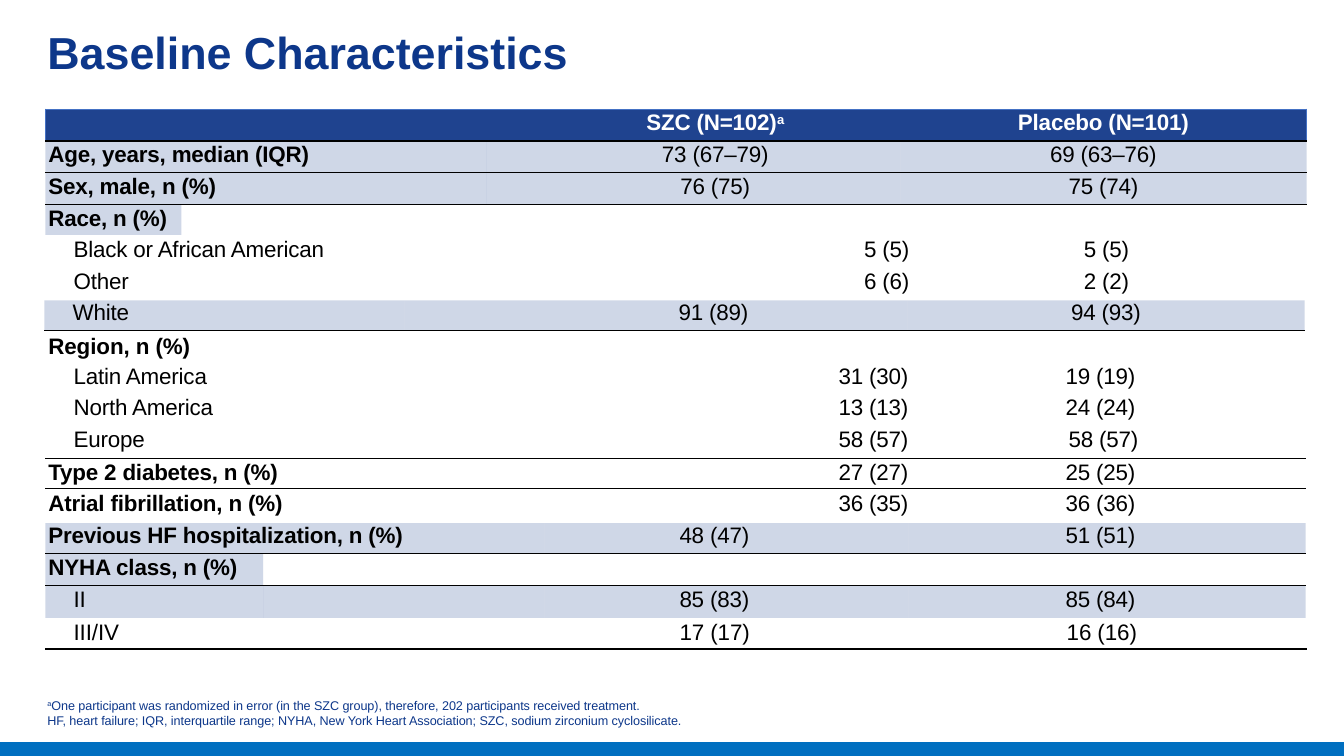
from dataclasses import dataclass, field

from lxml import etree
from pptx import Presentation
from pptx import util as u
from pptx.dml import color
from pptx.enum import shapes, text
from pptx.oxml import ns

NAVY, TITLE_BLUE, BAR_BLUE, EDGE_BLUE = "1F438F", "0D378A", "006FC0", "4471C4"
BLACK, WHITE = "000000", "FFFFFF"
LEFT, CENTER, RIGHT = text.PP_ALIGN.LEFT, text.PP_ALIGN.CENTER, text.PP_ALIGN.RIGHT
NO_GRID_STYLE = "{2D5ABB26-0587-4C30-8999-92F81FD0307C}"
RULE = (BLACK, 1)
TOP, BOTTOM, BOTH = {"T": RULE}, {"B": RULE}, {"T": RULE, "B": RULE}
HEADER_EDGES = {side: (EDGE_BLUE, 0.5) for side in "LRT"} | BOTTOM
LABEL_SPAN, VALUE_SPAN = (0, 1), (1, 3)


@dataclass
class Column:
    width: float
    indent: float = 0
    align: text.PP_ALIGN = LEFT


@dataclass
class Row:
    height: float
    spacing: float | None
    texts: tuple[str, ...]
    bold: bool = True
    indent: float = 0.03
    inset: float = 0
    shaded: int = 0
    borders: dict = field(default_factory=dict)
    span: tuple[int, int] | None = None
    last_shift: float = 0
    header: bool = False


@dataclass
class Block:
    left: float
    top: float
    columns: list[Column]
    rows: list[Row]


@dataclass
class Label:
    left: float
    top: float
    width: float
    height: float
    lines: tuple[str, ...]
    size: float = 16
    hue: str = BLACK
    bold: bool = False
    indent: float = 0.01


BLOCKS = [
    Block(0.45, 1.08,
          [Column(1.35), Column(3.03), Column(4.1, 0.43, CENTER), Column(4.03, 0, CENTER)],
          [Row(0.32, 18.8, ("", "", "SZC (N=102)^a^", "Placebo (N=101)"),
               borders=HEADER_EDGES, header=True),
           Row(0.31, 18.9, ("Age, years, median (IQR)", "", "73 (67–79)", "69 (63–76)"),
               shaded=4, borders=BOTH, span=LABEL_SPAN),
           Row(0.32, 18.9, ("Sex, male, n (%)", "", "76 (75)", "75 (74)"),
               shaded=4, borders=BOTH, span=LABEL_SPAN),
           Row(0.3, 18.9, ("Race, n (%)", "", "", ""), shaded=1, borders=TOP, span=VALUE_SPAN)]),
    Block(0.7, 2.36,
          [Column(4.37), Column(3.95, 0, RIGHT), Column(2.18, 0, RIGHT)],
          [Row(0.28, 17.6, ("Black or African American", "5 (5)", "5 (5)"), False),
           Row(0.28, 18.4, ("Other", "6 (6)", "2 (2)"), False, inset=0.02)]),
    Block(0.44, 2.98,
          [Column(3.57), Column(4.99, 2.72), Column(3.94, 0, CENTER)],
          [Row(0.3, 17.9, ("White", "91 (89)", "94 (93)"), False, 0.28,
               shaded=3, borders=BOTTOM)]),
    Block(0.45, 3.62,
          [Column(4.35), Column(4.21, 0, RIGHT), Column(3.94, 1.56)],
          [Row(0.28, 17.6, ("Latin America", "31 (30)", "19 (19)"), False, 0.28),
           Row(0.32, None, ("North America", "13 (13)", "24 (24)"), False, 0.28, 0.02),
           Row(0.33, None, ("Europe", "58 (57)", "58 (57)"), False, 0.28, 0.02,
               borders=BOTTOM, last_shift=0.03),
           Row(0.3, 18.9, ("Type 2 diabetes, n (%)", "27 (27)", "25 (25)"), borders=BOTH),
           Row(0.28, 18.4, ("Atrial fibrillation, n (%)", "36 (35)", "36 (36)"),
               inset=0.02, borders=TOP)]),
    Block(0.45, 5.19,
          [Column(2.16), Column(2.79), Column(3.61, 1.34), Column(3.94, 1.56)],
          [Row(0.3, 17.9, ("Previous HF hospitalization, n (%)", "", "48 (47)", "51 (51)"),
               shaded=4, borders=BOTTOM, span=LABEL_SPAN),
           Row(0.32, 18.9, ("NYHA class, n (%)", "", "", ""),
               shaded=1, borders=BOTH, span=VALUE_SPAN),
           Row(0.32, 18.7, ("II", "", "85 (83)", "85 (84)"), False, 0.28,
               shaded=4, borders=TOP)]),
]

LABELS = [
    Label(0.46, 0.23, 5.4, 0.56, ("Baseline Characteristics",), 32, TITLE_BLUE, True),
    Label(0.43, 6.9, 6.7, 0.33, (
        "^a^One participant was randomized in error (in the SZC group), "
        "therefore, 202 participants received treatment.",
        "HF, heart failure; IQR, interquartile range; NYHA, New York Heart Association; "
        "SZC, sodium zirconium cyclosilicate."), 9, TITLE_BLUE, indent=0.04),
    Label(0.47, 3.27, 1.5, 0.29, ("Region, n (%)",), bold=True),
    Label(0.72, 6.11, 0.6, 0.29, ("III/IV",)),
    Label(6.73, 6.11, 0.8, 0.29, ("17 (17)",)),
    Label(10.57, 6.11, 0.8, 0.29, ("16 (16)",)),
]


def rgb(value: str) -> color.RGBColor:
    return color.RGBColor.from_string(value)


def set_all(target, values: dict) -> None:
    for name, value in values.items():
        setattr(target, name, value)


def margins(left: float, top: float) -> dict:
    return {"margin_left": u.Inches(left), "margin_top": u.Inches(top),
            "margin_right": 0, "margin_bottom": 0}


def write(paragraph, content: str, size: float, bold: bool, hue: str, tracking: int = -10) -> None:
    for index, part in enumerate(content.split("^")):
        if part:
            run = paragraph.add_run()
            run.text = part
            set_all(run.font, {"name": "Arial", "size": u.Pt(size), "bold": bold})
            run.font.color.rgb = rgb(hue)
            properties = run._r.get_or_add_rPr()
            properties.set("spc", str(tracking))
            if index % 2:
                properties.set("baseline", "28000")


def add_border(cell, side: str, hue: str, width: float) -> None:
    line = etree.SubElement(cell._tc.get_or_add_tcPr(), ns.qn(f"a:ln{side}"), w=str(u.Pt(width)))
    solid = etree.SubElement(line, ns.qn("a:solidFill"))
    etree.SubElement(solid, ns.qn("a:srgbClr"), val=hue)


def paint_cell(cell, row: Row, index: int, last: int) -> None:
    for side in "LRTB":
        at_edge = {"L": index == 0, "R": index == last}.get(side, True)
        if side in row.borders and at_edge:
            add_border(cell, side, *row.borders[side])
    if not row.header and index >= row.shaded:
        cell.fill.background()
        return
    cell.fill.solid()
    cell.fill.fore_color.rgb = rgb(NAVY)
    if not row.header:
        tint = cell._tc.tcPr.find(f"{ns.qn('a:solidFill')}/{ns.qn('a:srgbClr')}")
        etree.SubElement(tint, ns.qn("a:alpha"), val="21000")


def fill_cell(cell, row: Row, column: Column, index: int, last: int) -> None:
    indent = row.indent if index == 0 else column.indent
    if index == last:
        indent += row.last_shift
    set_all(cell, margins(indent, row.inset))
    paint_cell(cell, row, index, last)
    paragraph = cell.text_frame.paragraphs[0]
    if row.texts[index]:
        paragraph.alignment = column.align
        if row.spacing:
            paragraph.line_spacing = u.Pt(row.spacing)
        bold = row.header or (row.bold and index == 0)
        write(paragraph, row.texts[index], 16, bold, WHITE if row.header else BLACK)
    else:
        etree.SubElement(paragraph._p, ns.qn("a:endParaRPr"), sz="1000")


def add_block(slide, block: Block) -> None:
    width = sum(column.width for column in block.columns)
    height = sum(row.height for row in block.rows)
    frame = slide.shapes.add_table(len(block.rows), len(block.columns), u.Inches(block.left),
                                   u.Inches(block.top), u.Inches(width), u.Inches(height))
    table = frame.table
    set_all(table, {"first_row": False, "horz_banding": False})
    table._tbl.tblPr.find(ns.qn("a:tableStyleId")).text = NO_GRID_STYLE
    for index, column in enumerate(block.columns):
        table.columns[index].width = u.Inches(column.width)
    for number, row in enumerate(block.rows):
        table.rows[number].height = u.Inches(row.height)
        for index, column in enumerate(block.columns):
            fill_cell(table.cell(number, index), row, column, index, len(block.columns) - 1)
        if row.span:
            first, final = row.span
            table.cell(number, first).merge(table.cell(number, final))


def add_label(slide, label: Label) -> None:
    shape = slide.shapes.add_textbox(*map(u.Inches, (label.left, label.top,
                                                     label.width, label.height)))
    frame = shape.text_frame
    set_all(frame, margins(label.indent, 0.02) | {"word_wrap": True})
    for index, line in enumerate(label.lines):
        paragraph = frame.add_paragraph() if index else frame.paragraphs[0]
        write(paragraph, line, label.size, label.bold, label.hue, 0 if label.size > 16 else -6)


def add_bar_and_rule(slide) -> None:
    bar = slide.shapes.add_shape(shapes.MSO_SHAPE.RECTANGLE, 0, u.Inches(7.37),
                                 u.Inches(13.33), u.Inches(0.13))
    bar.shadow.inherit = False
    bar.fill.solid()
    bar.fill.fore_color.rgb = bar.line.color.rgb = rgb(BAR_BLUE)
    bar.line.width = u.Pt(1)
    rule = slide.shapes.add_connector(shapes.MSO_CONNECTOR.STRAIGHT, u.Inches(0.45),
                                      u.Inches(6.44), u.Inches(12.96), u.Inches(6.44))
    rule.line.color.rgb = rgb(BLACK)
    rule.line.width = u.Pt(1)
    etree.SubElement(rule._element.spPr, ns.qn("a:effectLst"))


def main() -> None:
    presentation = Presentation()
    set_all(presentation, {"slide_width": u.Inches(13.33), "slide_height": u.Inches(7.5)})
    slide = presentation.slides.add_slide(presentation.slide_layouts[6])
    add_bar_and_rule(slide)
    for block in BLOCKS:
        add_block(slide, block)
    for label in LABELS:
        add_label(slide, label)
    presentation.save("out.pptx")


if __name__ == "__main__":
    main()
